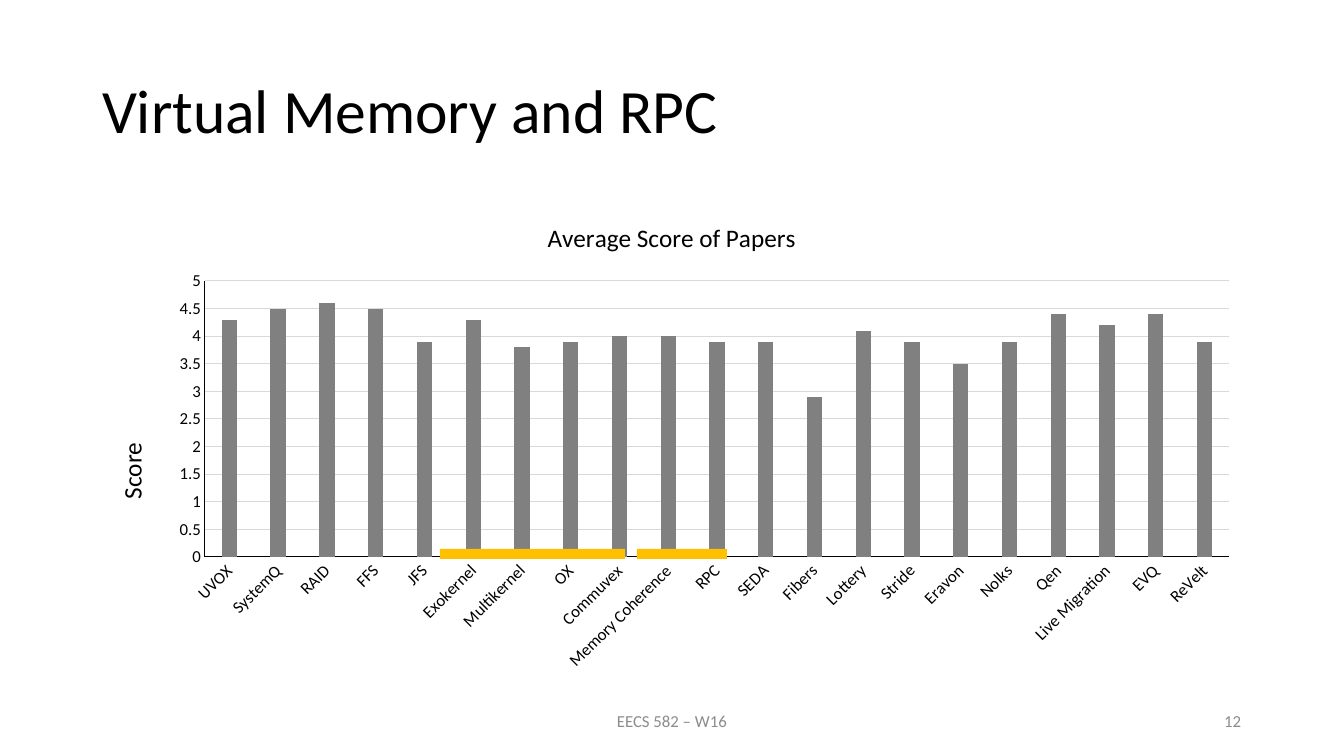
from dataclasses import dataclass

from lxml import etree
from pptx import Presentation
from pptx import util as u
from pptx.chart.data import CategoryChartData
from pptx.dml.color import RGBColor
from pptx.enum import chart as ch, shapes, text
from pptx.oxml.ns import qn

PX_PER_INCH = 100.8
FONT = "Calibri"
BLACK, GREY, FOOTER_GREY = "000000", "808080", "8C8C8C"
GRID_GREY, AMBER = "D9D9D9", "FFC000"


@dataclass
class Box:
    left: int
    top: int
    width: int
    height: int

    def emu(self) -> list[int]:
        return [px(n) for n in (self.left, self.top, self.width, self.height)]


@dataclass
class FooterItem:
    wording: str
    box: Box
    align: text.PP_ALIGN


SCORES = {
    "UVOX": 4.3, "SystemQ": 4.5, "RAID": 4.6, "FFS": 4.5, "JFS": 3.9,
    "Exokernel": 4.3, "Multikernel": 3.8, "OX": 3.9, "Commuvex": 4,
    "Memory Coherence": 4, "RPC": 3.9, "SEDA": 3.9, "Fibers": 2.9,
    "Lottery": 4.1, "Stride": 3.9, "Eravon": 3.5, "Nolks": 3.9, "Qen": 4.4,
    "Live Migration": 4.2, "EVQ": 4.4, "ReVelt": 3.9,
}
TITLE_BOX = Box(92, 40, 1160, 147)
CHART_BOX = Box(92, 202, 1160, 480)
PLOT_BOX = Box(205, 281, 1024, 276)
HIGHLIGHTS = [Box(440, 549, 185, 10), Box(637, 549, 90, 10)]
FOOTER = [
    FooterItem("EECS 582 – W16", Box(445, 701, 454, 40), text.PP_ALIGN.CENTER),
    FooterItem("12", Box(949, 701, 302, 40), text.PP_ALIGN.RIGHT),
]


def px(n: int) -> int:
    return round(n * 914400 / PX_PER_INCH)


def colour(hex_code: str) -> RGBColor:
    return RGBColor.from_string(hex_code)


def style_font(font, size: int, hex_code: str = BLACK) -> None:
    font.name, font.size, font.bold = FONT, u.Pt(size), False
    font.color.rgb = colour(hex_code)


def style_line(line, hex_code: str) -> None:
    line.color.rgb = colour(hex_code)
    line.width = u.Pt(0.75)


def place_in_chart(element, left: int, top: int, inner: Box | None = None) -> None:
    """Set a manual layout, from slide px to fractions of the chart."""
    for old in element.findall(qn("c:layout")):
        element.remove(old)
    layout = etree.Element(qn("c:layout"))
    manual = etree.SubElement(layout, qn("c:manualLayout"))
    settings = {"xMode": "edge", "yMode": "edge",
                "x": (left - CHART_BOX.left) / CHART_BOX.width,
                "y": (top - CHART_BOX.top) / CHART_BOX.height}
    if inner:
        settings = {"layoutTarget": "inner", **settings,
                    "w": inner.width / CHART_BOX.width,
                    "h": inner.height / CHART_BOX.height}
    for tag, value in settings.items():
        etree.SubElement(manual, qn(f"c:{tag}")).set("val", str(value))
    element.insert(0 if element.find(qn("c:tx")) is None else 1, layout)


def write_chart_title(owner_title, wording: str, left: int, top: int) -> None:
    owner_title.text_frame.text = wording
    style_font(owner_title.text_frame.paragraphs[0].runs[0].font, 18)
    place_in_chart(owner_title._element, left, top)


def add_score_chart(slide) -> None:
    data = CategoryChartData()
    data.categories = list(SCORES)
    data.add_series("Series 1", list(SCORES.values()))
    chart = slide.shapes.add_chart(
        ch.XL_CHART_TYPE.COLUMN_CLUSTERED, *CHART_BOX.emu(), data).chart
    style_font(chart.font, 10)
    chart.has_legend = False
    chart.has_title = True
    write_chart_title(chart.chart_title, "Average Score of Papers", 543, 216)

    # Columns
    columns = chart.plots[0]
    columns.gap_width, columns.overlap = 219, -27
    columns.vary_by_categories = False
    fill = columns.series[0].format.fill
    fill.solid()
    fill.fore_color.rgb = colour(GREY)

    # Axes
    papers, score = chart.category_axis, chart.value_axis
    for axis in (papers, score):
        axis.major_tick_mark = axis.minor_tick_mark = ch.XL_TICK_MARK.NONE
        style_font(axis.tick_labels.font, 12)
        style_line(axis.format.line, BLACK)
    label_body = papers._element.find(f"{qn('c:txPr')}/{qn('a:bodyPr')}")
    label_body.set("rot", "-2700000")
    score.minimum_scale, score.maximum_scale, score.major_unit = 0, 5, 0.5
    score.has_major_gridlines = True
    style_line(score.major_gridlines.format.line, GRID_GREY)
    score.has_title = True
    write_chart_title(score.axis_title, "Score", 110, 438)
    score_body = score.axis_title.text_frame._txBody.find(qn("a:bodyPr"))
    score_body.set("rot", "-5400000")
    score_body.set("vert", "horz")

    plot_area = chart._chartSpace.find(f"{qn('c:chart')}/{qn('c:plotArea')}")
    place_in_chart(plot_area, PLOT_BOX.left, PLOT_BOX.top, PLOT_BOX)


def add_highlight(slide, box: Box) -> None:
    bar = slide.shapes.add_shape(shapes.MSO_SHAPE.RECTANGLE, *box.emu())
    bar.shadow.inherit = False
    bar.fill.solid()
    bar.fill.fore_color.rgb = colour(AMBER)
    bar.line.fill.background()


def add_footer(slide, item: FooterItem) -> None:
    frame = slide.shapes.add_textbox(*item.box.emu()).text_frame
    frame.word_wrap = True
    frame.vertical_anchor = text.MSO_ANCHOR.MIDDLE
    frame.text = item.wording
    line = frame.paragraphs[0]
    line.alignment = item.align
    style_font(line.runs[0].font, 12, FOOTER_GREY)


def write_title(slide) -> None:
    title = slide.shapes.title
    title.left, title.top, title.width, title.height = TITLE_BOX.emu()
    frame = title.text_frame
    frame.text = "Virtual Memory and RPC"
    frame.vertical_anchor = text.MSO_ANCHOR.MIDDLE
    heading = frame.paragraphs[0]
    heading.alignment = text.PP_ALIGN.LEFT
    heading.line_spacing = 0.9
    style_font(heading.runs[0].font, 44)


def main() -> None:
    deck = Presentation()
    deck.slide_width, deck.slide_height = px(1344), px(756)
    slide = deck.slides.add_slide(deck.slide_layouts[5])  # title only
    write_title(slide)
    for item in FOOTER:
        add_footer(slide, item)
    add_score_chart(slide)
    for box in HIGHLIGHTS:
        add_highlight(slide, box)
    deck.save("out.pptx")


if __name__ == "__main__":
    main()
